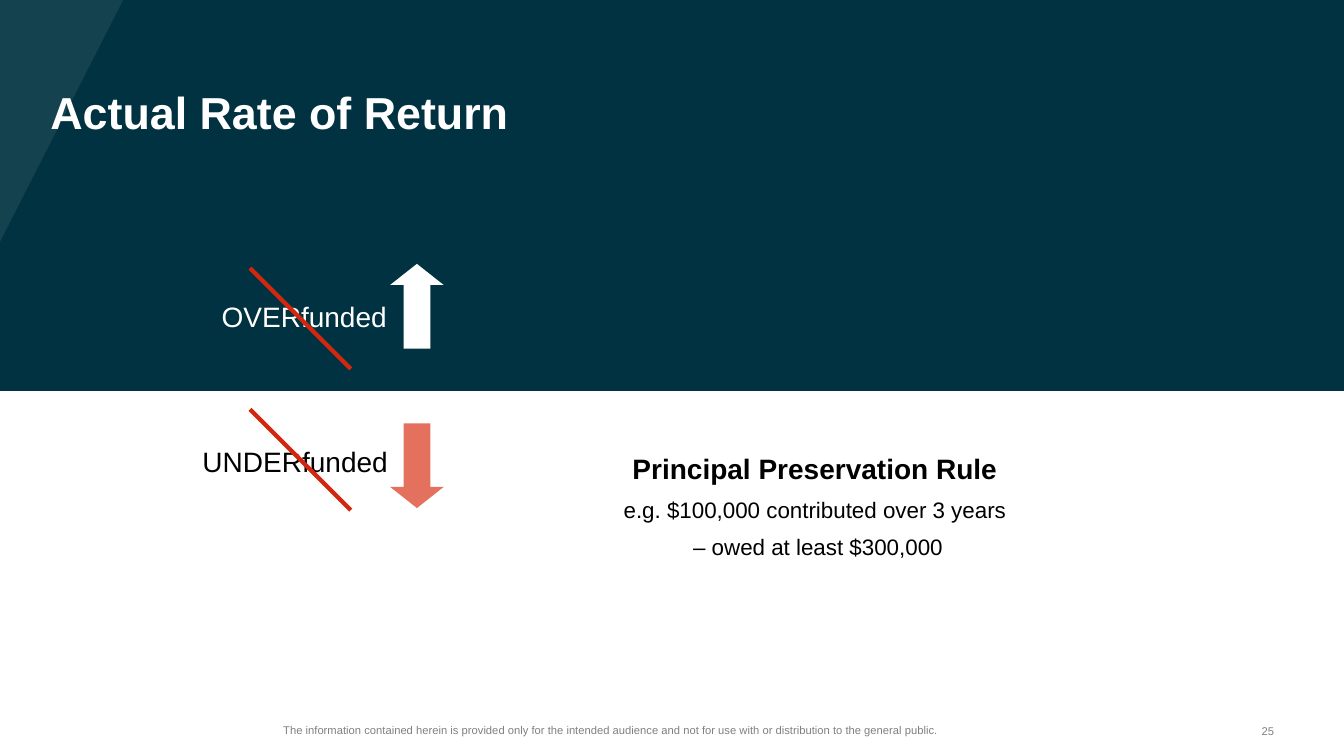
from dataclasses import dataclass
from lxml import etree
from pptx import Presentation
from pptx.dml.color import RGBColor as RGB
from pptx.enum.shapes import MSO_CONNECTOR as CONNECTOR, MSO_SHAPE as SHAPE
from pptx.enum.text import MSO_ANCHOR as ANCHOR, PP_ALIGN as ALIGN
from pptx.oxml.ns import qn
from pptx.util import Pt


@dataclass(frozen=True)
class Theme:
    font: str = "Arial"
    navy: RGB = RGB(0x00, 0x32, 0x41)
    white: RGB = RGB(0xFF, 0xFF, 0xFF)
    black: RGB = RGB(0x00, 0x00, 0x00)
    grey: RGB = RGB(0x80, 0x80, 0x80)
    coral: RGB = RGB(0xE4, 0x70, 0x5E)
    red: RGB = RGB(0xD2, 0x26, 0x0F)
    title: int = 32
    lead: int = 20
    detail: int = 16
    small: int = 8


theme = Theme()
prs = Presentation()
prs.slide_width, prs.slide_height = Pt(960), Pt(540)
slide = prs.slides.add_slide(prs.slide_layouts[6])
shapes = slide.shapes


def paint(sp, color):
    """Give a shape a flat fill with no outline or shadow."""
    sp.shadow.inherit = False
    sp.fill.solid()
    sp.fill.fore_color.rgb = color
    sp.line.fill.background()


def add_text(box, lines, color, para=None, inset=None, anchor=ANCHOR.TOP):
    """Add a text box; lines holds (text, size, bold), one per paragraph."""
    tf = shapes.add_textbox(*map(Pt, box)).text_frame
    tf.word_wrap = True
    tf.vertical_anchor = anchor
    if inset is not None:
        for side in ("left", "top", "right", "bottom"):
            setattr(tf, f"margin_{side}", Pt(inset))
    for i, (text, size, bold) in enumerate(lines):
        p = tf.add_paragraph() if i else tf.paragraphs[0]
        for name, value in (para or {}).items():
            setattr(p, name, value)
        r = p.add_run()
        r.text = text
        font = {"name": theme.font, "size": Pt(size), "bold": bold}
        for name, value in font.items():
            setattr(r.font, name, value)
        r.font.color.rgb = color


# Header band with its pale corner
band = shapes.add_shape(SHAPE.RECTANGLE, 0, 0, Pt(960), Pt(279.3))
paint(band, theme.navy)
outline = shapes.build_freeform(Pt(88), 0)
outline.add_line_segments([(0, 0), (0, Pt(172.8))], close=True)
corner = outline.convert_to_shape()
paint(corner, theme.white)
tint = corner.fill._xPr.find(qn("a:solidFill"))[0]
etree.SubElement(tint, qn("a:alpha"), val="8000")

add_text((36, 64.8, 720, 46.8), [("Actual Rate of Return", theme.title, True)],
         theme.white, {"line_spacing": 0.9}, inset=0)

# Funding states: label, arrow and strike-through
body = {"line_spacing": 1.2, "space_before": Pt(4)}
states = [
    ("OVERfunded", (151.2, 205.9, 149.8, 38.9), theme.white, 188.5, theme.white, 0, 191.5),
    ("UNDERfunded", (137.5, 308.9, 164.9, 60.5), theme.black, 302.4, theme.coral, 180, 292.4),
]
for text, box, color, arrow_top, arrow_color, turn, strike_top in states:
    add_text(box, [(text, theme.lead, False)], color, body)
    arrow = shapes.add_shape(SHAPE.UP_ARROW, Pt(278.7), Pt(arrow_top), Pt(38.2), Pt(60.5))
    arrow.adjustments[1] = 0.395
    arrow.rotation = turn
    paint(arrow, arrow_color)
    strike = shapes.add_connector(CONNECTOR.STRAIGHT, Pt(178.6), Pt(strike_top),
                                  Pt(250.6), Pt(strike_top + 72))
    strike.line.color.rgb = theme.red
    strike.line.width = Pt(3)
    etree.SubElement(strike._element.spPr, qn("a:effectLst"))

rule = [
    ("Principal Preservation Rule", theme.lead, True),
    ("e.g. $100,000 contributed over 3 years", theme.detail, False),
    (" – owed at least $300,000", theme.detail, False),
]
add_text((408.2, 313.9, 347.8, 87.1), rule, theme.black, {**body, "alignment": ALIGN.CENTER})

# Footer
notice = ("The information contained herein is provided only for the intended audience "
          "and not for use with or distribution to the general public.")
for text, box, align in [(notice, (202.3, 512.6, 482.4, 17.3), ALIGN.LEFT),
                         ("25", (882.7, 513.4, 27.4, 17.3), ALIGN.RIGHT)]:
    add_text(box, [(text, theme.small, False)], theme.grey, {"alignment": align},
             inset=0, anchor=ANCHOR.MIDDLE)

prs.save("out.pptx")
